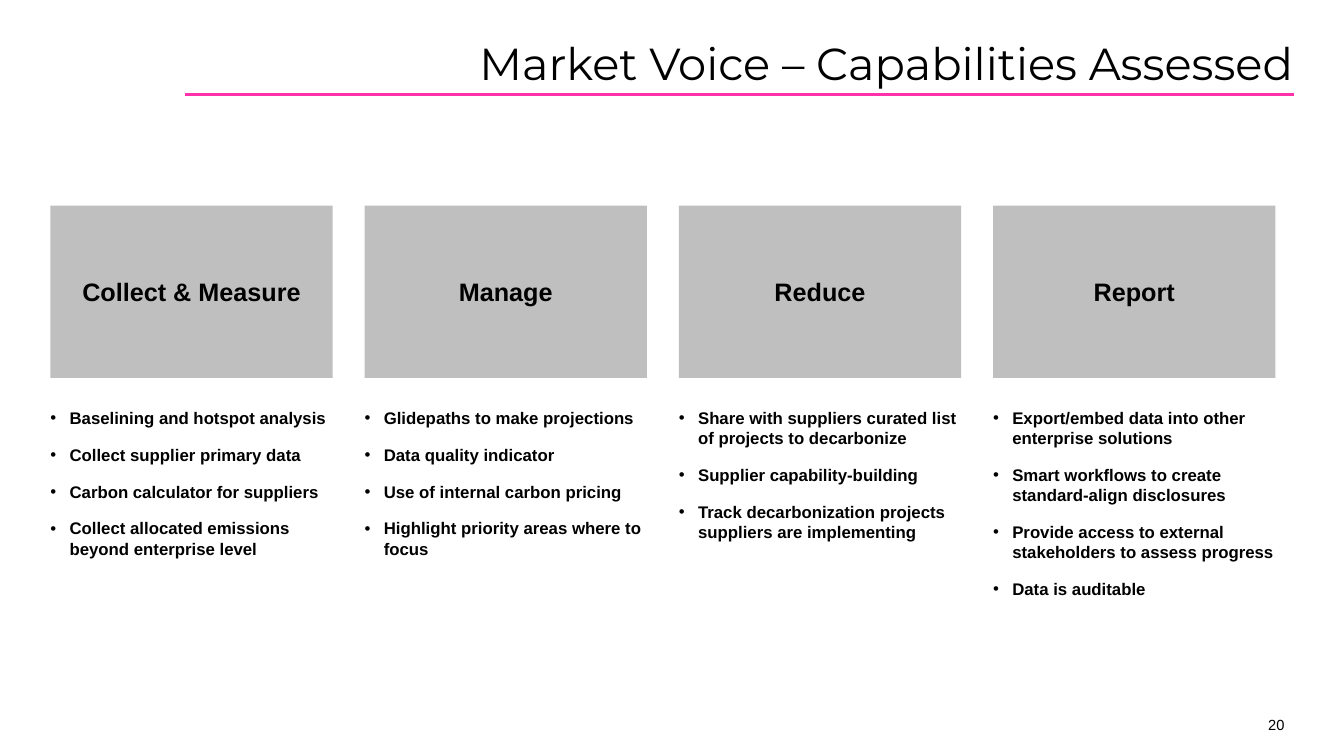
from dataclasses import dataclass

from lxml.etree import SubElement
from pptx import Presentation
from pptx.dml.color import RGBColor
from pptx.enum.shapes import MSO_CONNECTOR, MSO_SHAPE
from pptx.enum.text import MSO_ANCHOR, MSO_AUTO_SIZE, PP_ALIGN
from pptx.oxml.ns import qn
from pptx.util import Inches, Pt


@dataclass(frozen=True)
class Theme:
    """Colours, fonts and type sizes of the slide."""
    ink: RGBColor = RGBColor(0x00, 0x00, 0x00)
    accent: RGBColor = RGBColor(0xFF, 0x32, 0xA9)
    card: RGBColor = RGBColor(0xBF, 0xBF, 0xBF)
    title_font: str = "Montserrat"
    body_font: str = "Arial"
    title_size: float = 32
    heading_size: float = 18
    list_size: float = 12
    number_size: float = 10.5


THEME = Theme()

CAPABILITIES = [
    ("Collect & Measure", [
        "Baselining and hotspot analysis",
        "Collect supplier primary data",
        "Carbon calculator for suppliers",
        "Collect allocated emissions beyond enterprise level",
    ]),
    ("Manage", [
        "Glidepaths to make projections",
        "Data quality indicator",
        "Use of internal carbon pricing",
        "Highlight priority areas where to focus",
    ]),
    ("Reduce", [
        "Share with suppliers curated list of projects to decarbonize",
        "Supplier capability-building",
        "Track decarbonization projects suppliers are implementing",
    ]),
    ("Report", [
        "Export/embed data into other enterprise solutions",
        "Smart workflows to create standard-align disclosures",
        "Provide access to external stakeholders to assess progress",
        "Data is auditable",
    ]),
]


def place(sp, left, top, width, height):
    """Move a shape to a box given in inches."""
    sp.left, sp.top = Inches(left), Inches(top)
    sp.width, sp.height = Inches(width), Inches(height)


def set_frame(tf, anchor, inset=0):
    """Set wrapping, anchor and vertical inset, with no side insets."""
    tf.word_wrap = True
    tf.auto_size = MSO_AUTO_SIZE.NONE
    tf.vertical_anchor = anchor
    tf.margin_left = tf.margin_right = 0
    tf.margin_top = tf.margin_bottom = Inches(inset)


def add_run(p, text, size, font=THEME.body_font, bold=False):
    """Append one formatted run to a paragraph."""
    r = p.add_run()
    r.text = text
    r.font.name, r.font.size, r.font.bold = font, Pt(size), bold
    r.font.color.rgb = THEME.ink


def add_bullet(p, indent):
    """Give a paragraph a hanging round bullet."""
    pPr = p._p.get_or_add_pPr()
    pPr.set("marL", str(Inches(indent)))
    pPr.set("indent", str(-Inches(indent)))
    SubElement(pPr, qn("a:buFont"), typeface=THEME.body_font)
    SubElement(pPr, qn("a:buChar"), char="•")


def add_header(s, left, top, width, height):
    """Fill the title and draw the rule that ends at its right edge."""
    sp = s.shapes.title
    place(sp, left, top, width, height)
    set_frame(sp.text_frame, MSO_ANCHOR.BOTTOM)
    p = sp.text_frame.paragraphs[0]
    p.alignment, p.line_spacing = PP_ALIGN.RIGHT, 0.9
    add_run(p, "Market Voice – Capabilities Assessed", THEME.title_size, THEME.title_font)
    y = Inches(top + height + 0.05)
    rule = s.shapes.add_connector(
        MSO_CONNECTOR.STRAIGHT, Inches(left - 0.42), y, Inches(left + width), y)
    rule.line.color.rgb, rule.line.width = THEME.accent, Pt(2)
    SubElement(rule._element.spPr, qn("a:effectLst"))


def add_card(s, heading, left, top, width, height):
    """Draw a grey card with a centred heading."""
    sp = s.shapes.add_shape(MSO_SHAPE.RECTANGLE, 0, 0, 0, 0)
    place(sp, left, top, width, height)
    sp.shadow.inherit = False
    sp.fill.solid()
    sp.fill.fore_color.rgb = THEME.card
    sp.line.fill.background()
    set_frame(sp.text_frame, MSO_ANCHOR.MIDDLE)
    p = sp.text_frame.paragraphs[0]
    p.alignment = PP_ALIGN.CENTER
    add_run(p, heading, THEME.heading_size, bold=True)


def fill_list(sp, items, left, top, width, height):
    """Fill a body placeholder with bulleted items."""
    place(sp, left, top, width, height)
    tf = sp.text_frame
    set_frame(tf, MSO_ANCHOR.TOP, 0.05)
    for i, item in enumerate(items):
        p = tf.paragraphs[0] if i == 0 else tf.add_paragraph()
        add_bullet(p, 0.19)
        p.alignment = PP_ALIGN.LEFT
        p.space_before, p.space_after = Pt(6 if i else 0), Pt(6)
        add_run(p, item, THEME.list_size, bold=True)


def add_columns(s, left, top, width, height):
    """Spread the capability cards and their lists evenly over the box."""
    card_w, card_h, gap = 2.8, 1.71, 0.24
    step = (width - card_w) / (len(CAPABILITIES) - 1)
    bodies = [sp for sp in s.placeholders if sp.placeholder_format.idx > 0]
    for i, ((heading, items), body) in enumerate(zip(CAPABILITIES, bodies)):
        x = left + i * step
        add_card(s, heading, x, top, card_w, card_h)
        fill_list(body, items, x, top + card_h + gap, card_w, height - card_h - gap)


def add_page_number(s, left, top, width, height):
    """Write the page number at the right of the box."""
    sp = s.shapes.add_textbox(0, 0, 0, 0)
    place(sp, left, top, width, height)
    set_frame(sp.text_frame, MSO_ANCHOR.BOTTOM)
    p = sp.text_frame.paragraphs[0]
    p.alignment = PP_ALIGN.RIGHT
    add_run(p, "20", THEME.number_size)


def main():
    """Build the slide and save it."""
    prs = Presentation()
    prs.slide_width, prs.slide_height = Inches(13.33), Inches(7.5)
    s = prs.slides.add_slide(prs.slide_layouts.get_by_name("Comparison"))
    add_header(s, 2.26, 0.4, 10.57, 0.49)
    add_columns(s, 0.5, 2.04, 12.15, 3.97)
    add_page_number(s, 12.38, 7.1, 0.36, 0.18)
    prs.save("out.pptx")


if __name__ == "__main__":
    main()
